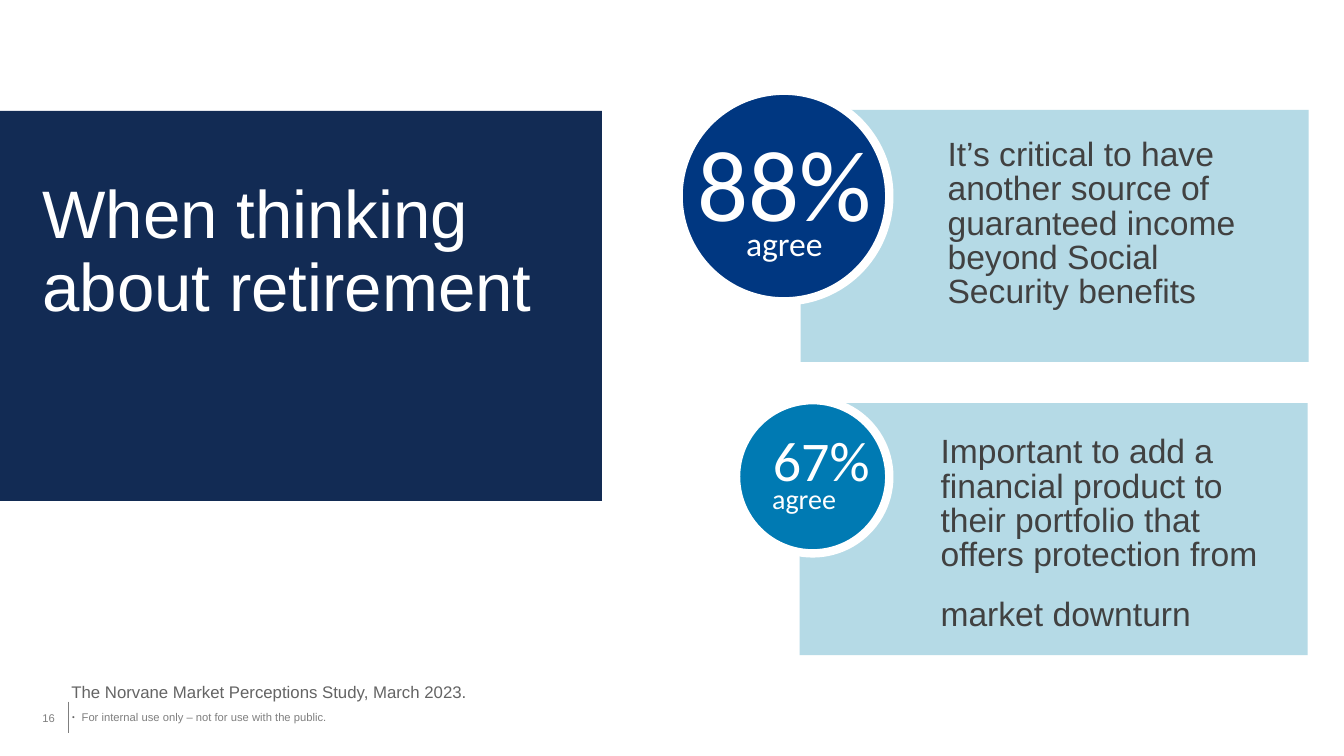
from lxml import etree
from pptx import Presentation
from pptx.dml.color import RGBColor
from pptx.enum.shapes import MSO_CONNECTOR, MSO_SHAPE
from pptx.enum.text import MSO_ANCHOR, PP_ALIGN
from pptx.oxml.ns import qn
from pptx.util import Emu, Pt

PX = 9144  # EMU per px, 100 px to the inch
RECTANGLE, OVAL = MSO_SHAPE.RECTANGLE, MSO_SHAPE.OVAL
LEFT, CENTER = PP_ALIGN.LEFT, PP_ALIGN.CENTER
TOP, MIDDLE = MSO_ANCHOR.TOP, MSO_ANCHOR.MIDDLE
WHITE, GRAY = "FFFFFF", "7F7F7F"

deck = Presentation()
deck.slide_width, deck.slide_height = Emu(1333 * PX), Emu(750 * PX)
page = deck.slides.add_slide(deck.slide_layouts[6])


def add_block(kind, area, fill, outline=None):
    block = page.shapes.add_shape(kind, *(Emu(n * PX) for n in area))
    block.shadow.inherit = False
    block.fill.solid()
    block.fill.fore_color.rgb = RGBColor.from_string(fill)
    if outline:
        block.line.color.rgb = RGBColor.from_string(outline)
        block.line.width = Pt(6)
    else:
        block.line.fill.background()


def add_text(text, area, size, color, font="Arial", align=LEFT, spacing=1.0,
             insets=(10, 5, 10, 5), anchor=TOP):
    """Each line of text becomes a paragraph; a vertical tab breaks a line."""
    box = page.shapes.add_textbox(*(Emu(n * PX) for n in area))
    frame = box.text_frame
    frame.word_wrap = True
    frame.vertical_anchor = anchor
    (frame.margin_left, frame.margin_top,
     frame.margin_right, frame.margin_bottom) = (Emu(n * PX) for n in insets)
    frame.text = text
    for para in frame.paragraphs:
        para.alignment = align
        para.line_spacing = spacing
        for span in para.runs:
            span.font.name = font
            span.font.size = Pt(size)
            span.font.color.rgb = RGBColor.from_string(color)
    return frame


# Footer
add_text("For internal use only – not for use with the public.",
         (81, 699, 1191, 26), 8, GRAY, insets=(0, 6, 12, 6))
divider = page.shapes.add_connector(
    MSO_CONNECTOR.STRAIGHT, *(Emu(n * PX) for n in (68, 696, 68, 727)))
divider.line.color.rgb = RGBColor.from_string(GRAY)
divider.line.width = Pt(0.75)
etree.SubElement(divider._element.spPr, qn("a:effectLst"))
add_text("16", (42, 692, 40, 40), 8, GRAY, insets=(0, 6, 0, 6), anchor=MIDDLE)

# Findings: panel, statement, circle, share and "agree" label
findings = [
    ((793, 400), (923, 428), "Important to add a financial product to their "
     "portfolio that offers protection from \vmarket downturn",
     (730, 397, 152, 152), "007AB3",
     "67%", (756, 425, 117, 71), 40, (755, 473, 85, 44), 20),
    ((794, 109), (930, 133), "It’s critical to have another source of "
     "guaranteed income beyond Social Security benefits",
     (673, 90, 209, 209), "003781",
     "88%", (681, 128, 195, 119), 72, (729, 216, 98, 50), 24),
]
for (panel, statement_at, statement, circle, circle_color,
     share, share_area, share_size, label_area, label_size) in findings:
    add_block(RECTANGLE, (*panel, 504, 250), "B5DAE6")
    add_text(statement, (*statement_at, 339, 182), 24, "414141", spacing=0.85)
    add_block(OVAL, circle, circle_color, WHITE)
    add_text(share, share_area, share_size, WHITE, "Calibri", CENTER, 0.9)
    add_text("agree", label_area, label_size, WHITE, "Calibri", CENTER)

# Study reference
reference = add_text("The Norvane Market Perceptions Study, March 2023.\n.",
                     (61, 671, 889, 27), 12, "646464")
reference.paragraphs[1].runs[0].font.name = "Calibri"

# Title panel
add_block(RECTANGLE, (-2, 110, 599, 387), "122B54")
add_text("When thinking about retirement", (42, 179, 524, 244), 48, WHITE,
         spacing=0.9, insets=(0, 0, 0, 0))

deck.save("out.pptx")
